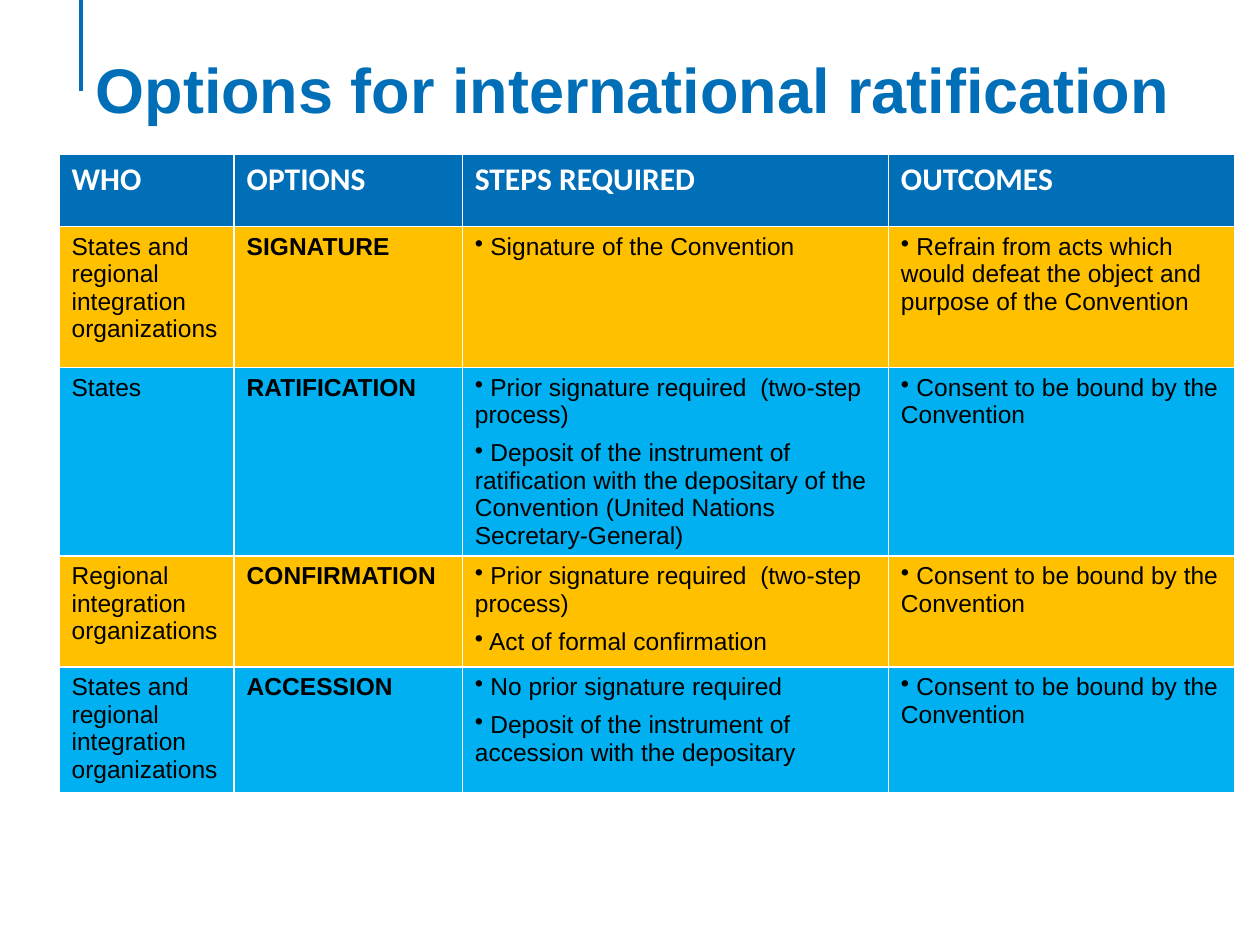
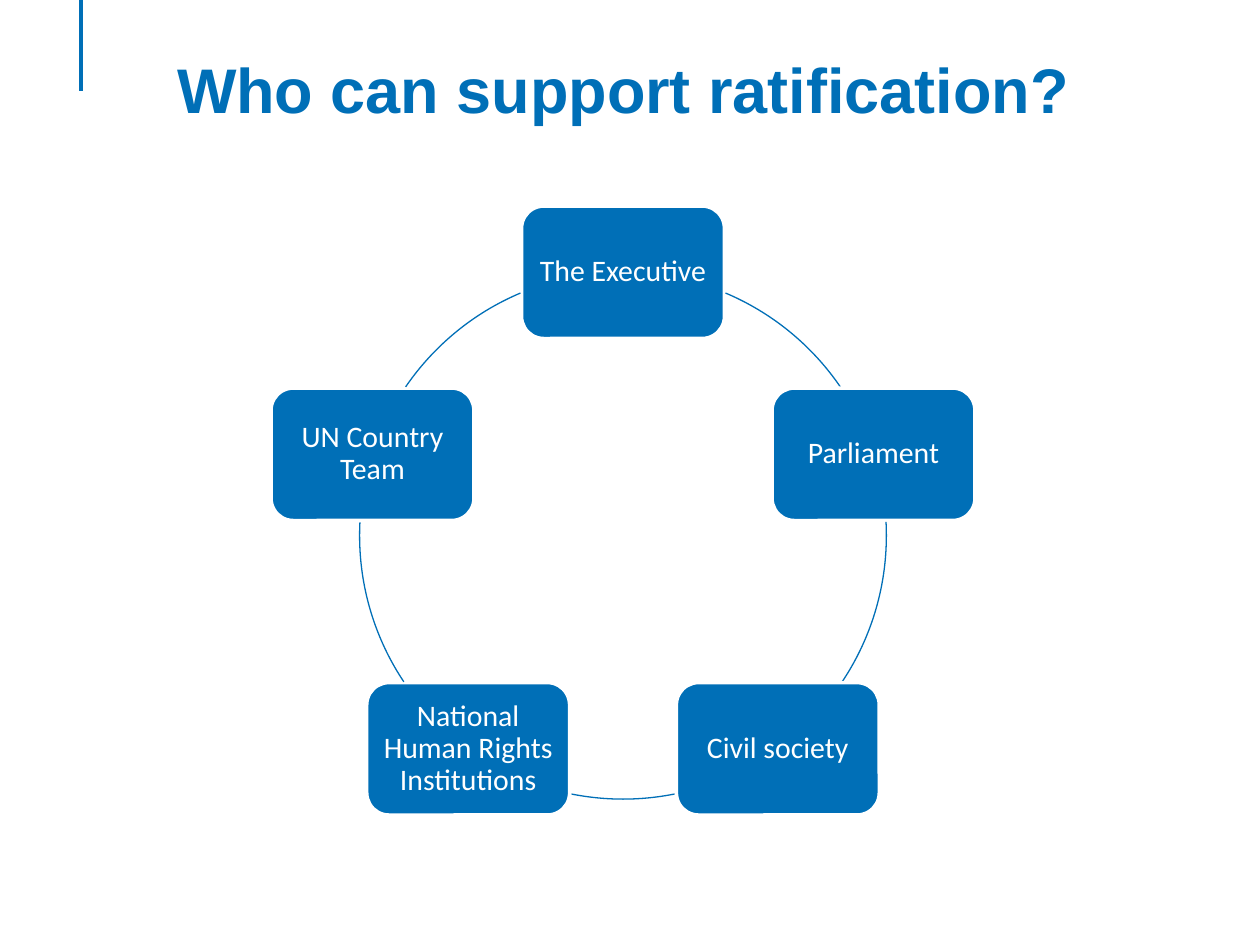
from math import cos, radians, sin

from lxml.etree import SubElement
from pptx import Presentation
from pptx.dml.color import RGBColor
from pptx.enum.shapes import MSO_CONNECTOR, MSO_SHAPE
from pptx.enum.text import MSO_ANCHOR, MSO_AUTO_SIZE, PP_ALIGN
from pptx.oxml.ns import qn
from pptx.util import Cm, Pt

BLUE = RGBColor(0x00, 0x6F, 0xB7)
SKY = RGBColor(0x00, 0xB0, 0xF0)
AMBER = RGBColor(0xFF, 0xC0, 0x00)
WHITE = RGBColor(0xFF, 0xFF, 0xFF)
BLACK = RGBColor(0x00, 0x00, 0x00)
HEADING_FONT = "Arial"
LABEL_FONT = "Calibri"
TITLE_ONLY = 5

# Columns: who, option, steps required, outcomes
HEADINGS = ["WHO", "OPTIONS", "STEPS REQUIRED", "OUTCOMES"]
STATES_AND_REGIONS = "States and regional integration organizations"
TWO_STEPS = "Prior signature required  (two-step process)"
CONSENT = ["Consent to be bound by the Convention"]
RATIFICATION_OPTIONS = [
    (STATES_AND_REGIONS, "SIGNATURE",
     ["Signature of the Convention"],
     ["Refrain from acts which would defeat the object and purpose "
      "of the Convention"]),
    ("States", "RATIFICATION",
     [TWO_STEPS,
      "Deposit of the instrument of ratification with the depositary of the "
      "Convention (United Nations Secretary-General)"],
     CONSENT),
    ("Regional integration organizations", "CONFIRMATION",
     [TWO_STEPS, "Act of formal confirmation"],
     CONSENT),
    (STATES_AND_REGIONS, "ACCESSION",
     ["No prior signature required",
      "Deposit of the instrument of accession with the depositary"],
     CONSENT),
]
COLUMN_WIDTHS = [3.53, 4.6, 8.59, 6.99]
ROW_HEIGHTS = [1.47, 2.84, 3.43, 2.24, 2.54]

# Clockwise from the top
SUPPORTERS = ["The Executive", "Parliament", "Civil society",
              "National Human Rights Institutions", "UN Country Team"]
# Degrees clockwise from three o'clock, between neighbouring supporters
LINK_ANGLES = [(292.9, 325.6), (357, 33.7), (78.7, 101.3),
               (146.3, 183), (214.4, 247.1)]


class Deck:
    def __init__(self):
        self.presentation = Presentation()
        self.presentation.slide_width = Cm(25.4)
        self.presentation.slide_height = Cm(19.05)
        self.slide = None

    def add_run(self, paragraph, text, font_name, size, color, bold=False):
        run = paragraph.add_run()
        run.text = text
        run.font.name = font_name
        run.font.size = Pt(size)
        run.font.color.rgb = color
        run.font.bold = bold

    def start_slide(self, title, left, width):
        layout = self.presentation.slide_layouts[TITLE_ONLY]
        self.slide = self.presentation.slides.add_slide(layout)
        self.add_margin_line()
        shape = self.slide.shapes.title
        shape.left, shape.top = Cm(left), Cm(0.76)
        shape.width, shape.height = Cm(width), Cm(3.02)
        frame = shape.text_frame
        frame.auto_size = MSO_AUTO_SIZE.NONE
        frame.vertical_anchor = MSO_ANCHOR.TOP
        frame.margin_top = Cm(0.25)
        paragraph = frame.paragraphs[0]
        paragraph.alignment = PP_ALIGN.CENTER
        self.add_run(paragraph, title, HEADING_FONT, 36, BLUE, bold=True)

    def add_margin_line(self):
        connector = self.slide.shapes.add_connector(
            MSO_CONNECTOR.STRAIGHT, Cm(1.63), Cm(0), Cm(1.63), Cm(1.83))
        connector.line.color.rgb = BLUE
        connector.line.width = Pt(2)
        SubElement(connector.element.spPr, qn("a:effectLst"))

    def add_table(self, left, top, widths, heights):
        table = self.slide.shapes.add_table(
            len(heights), len(widths), Cm(left), Cm(top),
            Cm(sum(widths)), Cm(sum(heights))).table
        table.horz_banding = False
        for column, width in zip(table.columns, widths):
            column.width = Cm(width)
        for row, height in zip(table.rows, heights):
            row.height = Cm(height)
        return table

    def fill_cell(self, cell, content, fill, font_name=HEADING_FONT, size=14,
                  color=BLACK, bold=False):
        """Write a string as plain text, or a list of strings as bullets."""
        cell.fill.solid()
        cell.fill.fore_color.rgb = fill
        if isinstance(content, str):
            self.add_run(cell.text_frame.paragraphs[0], content,
                         font_name, size, color, bold)
            return
        for index, item in enumerate(content):
            if index == 0:
                paragraph = cell.text_frame.paragraphs[0]
            else:
                paragraph = cell.text_frame.add_paragraph()
                paragraph.space_before = Pt(6)
            properties = paragraph._p.get_or_add_pPr()
            SubElement(properties, qn("a:buChar")).set("char", "•")
            self.add_run(paragraph, " " + item, font_name, size, color, bold)

    def add_node(self, text, center_x, center_y, width=4.09, height=2.67):
        shape = self.slide.shapes.add_shape(
            MSO_SHAPE.ROUNDED_RECTANGLE, Cm(center_x - width / 2),
            Cm(center_y - height / 2), Cm(width), Cm(height))
        shape.shadow.inherit = False
        shape.fill.solid()
        shape.fill.fore_color.rgb = BLUE
        shape.line.color.rgb = WHITE
        shape.line.width = Pt(2)
        frame = shape.text_frame
        frame.word_wrap = True
        frame.vertical_anchor = MSO_ANCHOR.MIDDLE
        frame.margin_left = frame.margin_right = Cm(0.18)
        frame.margin_top = frame.margin_bottom = Cm(0.18)
        paragraph = frame.paragraphs[0]
        paragraph.alignment = PP_ALIGN.CENTER
        paragraph.line_spacing = 0.9
        self.add_run(paragraph, text, LABEL_FONT, 17, WHITE)

    def add_arc(self, center_x, center_y, radius, start, end):
        shape = self.slide.shapes.add_shape(
            MSO_SHAPE.ARC, Cm(center_x - radius), Cm(center_y - radius),
            Cm(2 * radius), Cm(2 * radius))
        # Angles count 60000 per degree, adjustments are scaled by 100000
        shape.adjustments[0] = start * 0.6
        shape.adjustments[1] = end * 0.6
        shape.shadow.inherit = False
        shape.fill.background()
        shape.line.color.rgb = BLUE
        shape.line.width = Pt(0.75)


def build_options_slide(deck):
    deck.start_slide("Options for international ratification", 1.19, 23.14)
    table = deck.add_table(1.19, 3.1, COLUMN_WIDTHS, ROW_HEIGHTS)
    for column, heading in enumerate(HEADINGS):
        deck.fill_cell(table.cell(0, column), heading, BLUE,
                       LABEL_FONT, 18, WHITE, bold=True)
    for row, contents in enumerate(RATIFICATION_OPTIONS, start=1):
        fill = AMBER if row % 2 else SKY
        for column, content in enumerate(contents):
            deck.fill_cell(table.cell(row, column), content, fill,
                           bold=HEADINGS[column] == "OPTIONS")


def build_supporters_slide(deck):
    deck.start_slide("Who can support ratification?", 2.06, 21.01)
    center_x, center_y, radius = 12.56, 10.8, 5.31
    step = 360 / len(SUPPORTERS)
    for index, (name, link) in enumerate(zip(SUPPORTERS, LINK_ANGLES)):
        angle = radians(index * step - 90)
        deck.add_node(name, center_x + radius * cos(angle),
                      center_y + radius * sin(angle))
        deck.add_arc(center_x, center_y, radius, *link)


def main():
    deck = Deck()
    build_options_slide(deck)
    build_supporters_slide(deck)
    deck.presentation.save("out.pptx")


if __name__ == "__main__":
    main()
